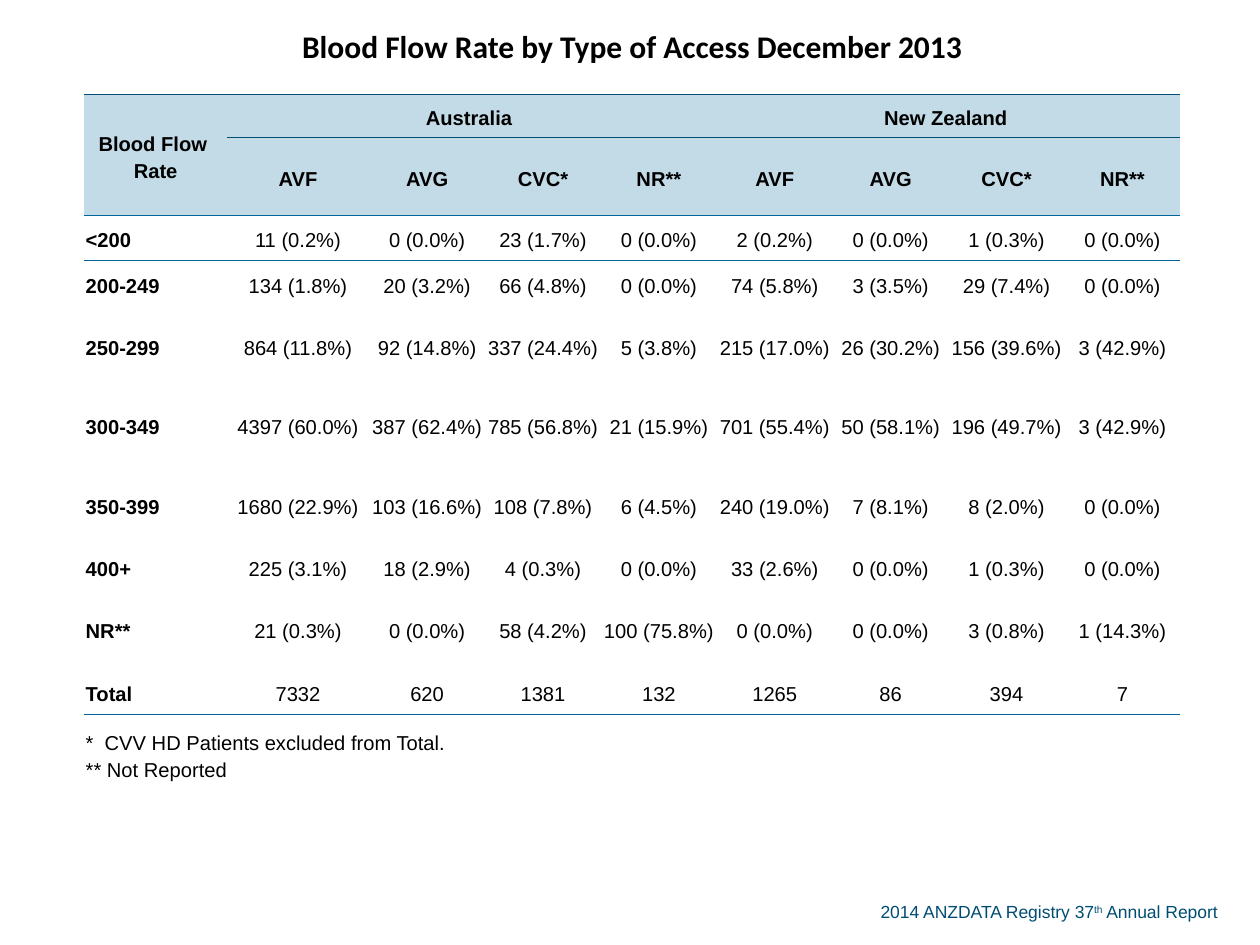
import pptx
import pptx.util
import pptx.dml.color
import pptx.enum.text
import pptx.oxml
import pptx.oxml.ns

Inches, Pt = pptx.util.Inches, pptx.util.Pt
ALIGN = pptx.enum.text.PP_ALIGN
COLORS = {"text": "000000", "navy": "004D73", "rule": "006699", "header": "C2DBE7"}
NO_STYLE = "{2D5ABB26-0587-4C30-8999-92F81FD0307C}"

COL_WIDTHS = [1.13] * 2 + [0.92] * 7
ROW_HEIGHTS = [0.75, 0.34, 0.62, 0.36, 0.36, 0.63, 0.63, 0.63, 0.36, 0.63, 0.36, 0.63]
ACCESS_TYPES = ["AVF", "AVG", "CVC*", "NR**"]
FLOW_RATES = [
    ["<200", "11 (0.2%)", "0 (0.0%)", "23 (1.7%)", "0 (0.0%)",
     "2 (0.2%)", "0 (0.0%)", "1 (0.3%)", "0 (0.0%)"],
    ["200-249", "134 (1.8%)", "20 (3.2%)", "66 (4.8%)", "0 (0.0%)",
     "74 (5.8%)", "3 (3.5%)", "29 (7.4%)", "0 (0.0%)"],
    ["250-299", "864 (11.8%)", "92 (14.8%)", "337 (24.4%)", "5 (3.8%)",
     "215 (17.0%)", "26 (30.2%)", "156 (39.6%)", "3 (42.9%)"],
    ["300-349", "4397 (60.0%)", "387 (62.4%)", "785 (56.8%)", "21 (15.9%)",
     "701 (55.4%)", "50 (58.1%)", "196 (49.7%)", "3 (42.9%)"],
    ["350-399", "1680 (22.9%)", "103 (16.6%)", "108 (7.8%)", "6 (4.5%)",
     "240 (19.0%)", "7 (8.1%)", "8 (2.0%)", "0 (0.0%)"],
    ["400+", "225 (3.1%)", "18 (2.9%)", "4 (0.3%)", "0 (0.0%)",
     "33 (2.6%)", "0 (0.0%)", "1 (0.3%)", "0 (0.0%)"],
    ["NR**", "21 (0.3%)", "0 (0.0%)", "58 (4.2%)", "100 (75.8%)",
     "0 (0.0%)", "0 (0.0%)", "3 (0.8%)", "1 (14.3%)"],
    ["Total", "7332", "620", "1381", "132", "1265", "86", "394", "7"],
]


def rgb(name):
    return pptx.dml.color.RGBColor.from_string(COLORS[name])


def add_text(p, text, size=11.5, font="Arial", color="text", bold=False, raised=False):
    """Append text to a paragraph; a newline becomes a line break."""
    for i, line in enumerate(text.split("\n")):
        if i:
            p.add_line_break()
        r = p.add_run()
        r.text = line
        r.font.size, r.font.name, r.font.bold = Pt(size), font, bold
        r.font.color.rgb = rgb(color)
        if raised:
            r._r.get_or_add_rPr().set("baseline", "30000")


class SlideBuilder:
    def __init__(self, prs):
        self.s = prs.slides.add_slide(prs.slide_layouts[6])

    def footer(self, left, top, width, height, parts):
        sp = self.s.shapes.add_textbox(Inches(left), Inches(top), Inches(width), Inches(height))
        tf = sp.text_frame
        tf.word_wrap = True
        for text, raised in parts:
            add_text(tf.paragraphs[0], text, size=10, color="navy", raised=raised)

    def table(self, left, top, widths, heights):
        frame = self.s.shapes.add_table(
            len(heights), len(widths), Inches(left), Inches(top),
            Inches(sum(widths)), Inches(sum(heights)))
        tbl = frame.table
        tbl.first_row = tbl.horz_banding = False
        tbl._tbl.tblPr.find(pptx.oxml.ns.qn("a:tableStyleId")).text = NO_STYLE
        for col, width in zip(tbl.columns, widths):
            col.width = Inches(width)
        for row, height in zip(tbl.rows, heights):
            row.height = Inches(height)
        for cell in tbl.iter_cells():
            cell.fill.background()
            cell.vertical_anchor = pptx.enum.text.MSO_ANCHOR.MIDDLE
            cell.margin_left = cell.margin_right = cell.margin_top = Inches(0.01)
            cell.margin_bottom = 0
        return tbl

    def cell(self, cell, text, align=ALIGN.CENTER, spaced=True, **fmt):
        p = cell.text_frame.paragraphs[0]
        p.alignment = align
        if spaced:
            p.line_spacing, p.space_after = 1.19, Pt(14)
        add_text(p, text, **fmt)

    def border(self, cell, side, color, width):
        ln = pptx.oxml.parse_xml(
            f'<a:ln{side} {pptx.oxml.ns.nsdecls("a")} w="{Pt(width)}"><a:solidFill>'
            f'<a:srgbClr val="{COLORS[color]}"/></a:solidFill></a:ln{side}>')
        tc_pr = cell._tc.get_or_add_tcPr()
        tc_pr.insert(1 if side == "B" and tc_pr.find(pptx.oxml.ns.qn("a:lnT")) is not None else 0, ln)

    def rule_below(self, tbl, row, color, width):
        for c in range(len(tbl.columns)):
            self.border(tbl.cell(row, c), "B", color, width)
            self.border(tbl.cell(row + 1, c), "T", color, width)


def main():
    prs = pptx.Presentation()
    prs.slide_width, prs.slide_height = Inches(10), Inches(7.5)
    b = SlideBuilder(prs)

    # Report footer
    b.footer(6.89, 7.1, 2.99, 0.27, [
        ("2014 ANZDATA Registry 37", False), ("th", True), (" Annual Report", False)])

    # Table grid: title row, two header rows, data rows, footnote row
    tbl = b.table(0.67, 0, COL_WIDTHS, ROW_HEIGHTS)
    last_row, last_col = len(ROW_HEIGHTS) - 1, len(COL_WIDTHS) - 1
    for first, last in [((0, 0), (0, last_col)), ((1, 0), (2, 0)), ((1, 1), (1, 4)),
                        ((1, 5), (1, 8)), ((last_row, 0), (last_row, last_col))]:
        tbl.cell(*first).merge(tbl.cell(*last))

    # Title
    b.cell(tbl.cell(0, 0), "Blood Flow Rate by Type of Access December 2013",
           spaced=False, size=18, font="Calibri", bold=True)

    # Header
    for row in (1, 2):
        for c in range(last_col + 1):
            tbl.cell(row, c).fill.solid()
            tbl.cell(row, c).fill.fore_color.rgb = rgb("header")
    for c, text in [(0, "Blood Flow \nRate"), (1, "Australia "), (5, "New Zealand ")]:
        b.cell(tbl.cell(1, c), text, bold=True)
    for c, text in enumerate(ACCESS_TYPES * 2, 1):
        b.cell(tbl.cell(2, c), text, bold=True)

    # Data
    for row, values in enumerate(FLOW_RATES, 3):
        for c, text in enumerate(values):
            b.cell(tbl.cell(row, c), text, bold=c == 0,
                   align=ALIGN.CENTER if c else ALIGN.LEFT)

    # Footnotes
    b.cell(tbl.cell(last_row, 0),
           "*  CVV HD Patients excluded from Total.\n** Not Reported", align=ALIGN.LEFT)

    # Rules
    b.rule_below(tbl, 0, "navy", 1)
    b.rule_below(tbl, 2, "rule", 0.5)
    b.rule_below(tbl, last_row - 1, "rule", 0.5)
    b.border(tbl.cell(1, 0), "B", "rule", 0.5)

    prs.save("out.pptx")


if __name__ == "__main__":
    main()
